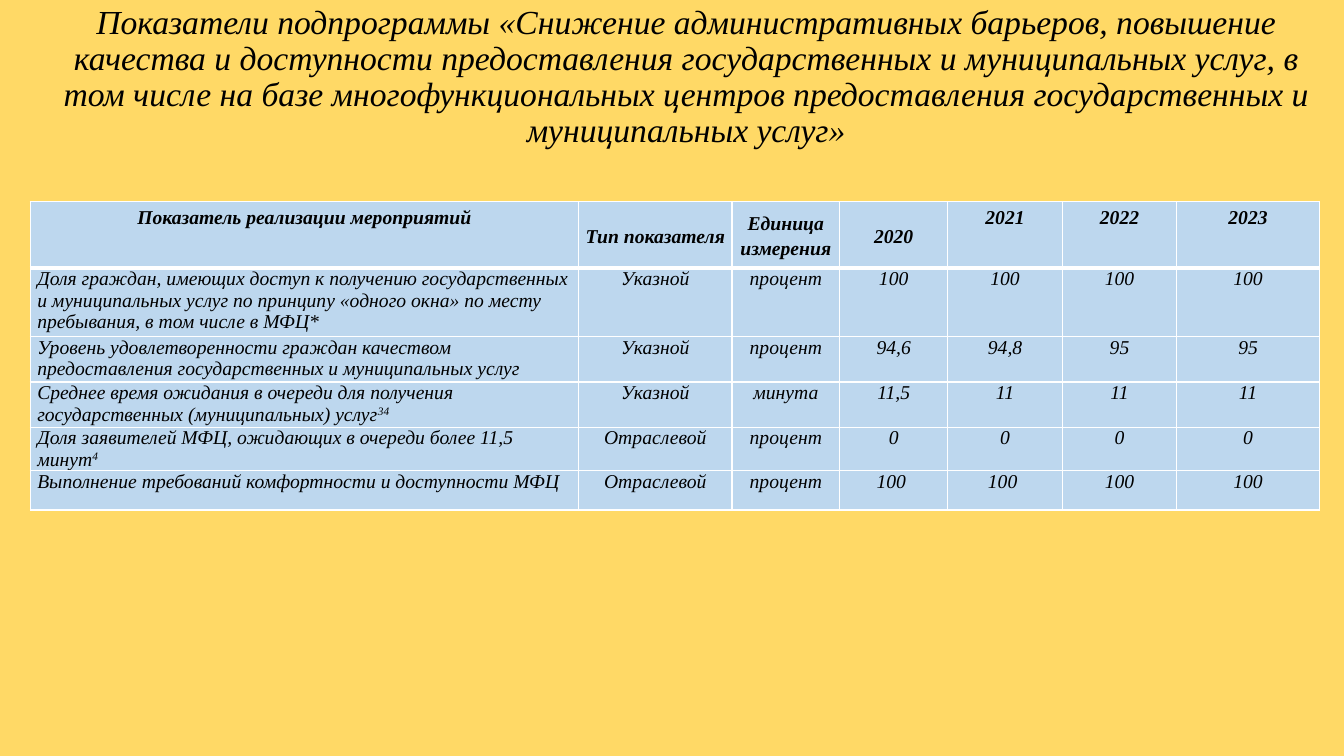
from lxml.etree import SubElement
from pptx import Presentation
from pptx.dml.color import RGBColor
from pptx.enum.text import MSO_ANCHOR, MSO_AUTO_SIZE, PP_ALIGN
from pptx.oxml.ns import qn
from pptx.util import Inches, Pt

COLORS = {"background": "FFD966", "cell": "BDD7EE", "border": "FFFFFF", "text": "000000"}
FONT = "Times New Roman"


def style_paragraph(paragraph, size, align, bold=False, spacing=None):
    paragraph.alignment = align
    paragraph.line_spacing = spacing
    paragraph.font.name = FONT
    paragraph.font.size = Pt(size)
    paragraph.font.italic = True
    paragraph.font.bold = bold
    paragraph.font.color.rgb = RGBColor.from_string(COLORS["text"])


def add_border(cell, side, width):
    line = SubElement(cell._tc.get_or_add_tcPr(), qn(f"a:ln{side}"), w=str(Pt(width)))
    fill = SubElement(line, qn("a:solidFill"))
    SubElement(fill, qn("a:srgbClr"), val=COLORS["border"])


presentation = Presentation()
presentation.slide_width = Inches(13.33)
presentation.slide_height = Inches(7.5)
slide = presentation.slides.add_slide(presentation.slide_layouts[5])
slide.background.fill.solid()
slide.background.fill.fore_color.rgb = RGBColor.from_string(COLORS["background"])

title = slide.shapes.title
title.left, title.top = Inches(0.44), Inches(0.13)
title.width, title.height = Inches(12.73), Inches(1.28)
title.text_frame.text = (
    "Показатели подпрограммы «Снижение административных барьеров, повышение качества "
    "и доступности предоставления государственных и муниципальных услуг, в том числе "
    "на базе многофункциональных центров предоставления государственных и муниципальных услуг»"
)
title.text_frame.word_wrap = True
title.text_frame.auto_size = MSO_AUTO_SIZE.NONE
title.text_frame.vertical_anchor = MSO_ANCHOR.MIDDLE
style_paragraph(title.text_frame.paragraphs[0], 24, PP_ALIGN.CENTER, spacing=0.9)

rows = [
    ["Показатель реализации мероприятий", "Тип показателя", "Единица измерения",
     "2020", "2021", "2022", "2023"],
    ["Доля граждан, имеющих доступ к получению государственных и муниципальных услуг "
     "по принципу «одного окна» по месту пребывания, в том числе в МФЦ*",
     "Указной", "процент", "100", "100", "100", "100"],
    ["Уровень удовлетворенности граждан качеством предоставления государственных "
     "и муниципальных услуг", "Указной", "процент", "94,6", "94,8", "95", "95"],
    ["Среднее время ожидания в очереди для получения государственных (муниципальных) услуг",
     "Указной", "минута", "11,5", "11", "11", "11"],
    ["Доля заявителей МФЦ, ожидающих в очереди более 11,5 минут",
     "Отраслевой", "процент", "0", "0", "0", "0"],
    ["Выполнение требований комфортности и доступности МФЦ",
     "Отраслевой", "процент", "100 ", "100 ", "100", "100"],
]
footnotes = {3: "34", 4: "4"}
column_widths = [5.44, 1.52, 1.07, 1.07, 1.14, 1.13, 1.42]
row_heights = [0.66, 0.68, 0.45, 0.45, 0.43, 0.39]

table = slide.shapes.add_table(
    len(rows), len(column_widths), Inches(0.3), Inches(2),
    Inches(sum(column_widths)), Inches(sum(row_heights)),
).table
for column, width in zip(table.columns, column_widths):
    column.width = Inches(width)
for row, height in zip(table.rows, row_heights):
    row.height = Inches(height)

for row_index, texts in enumerate(rows):
    is_header = row_index == 0
    for column_index, text in enumerate(texts):
        cell = table.cell(row_index, column_index)
        paragraph = cell.text_frame.paragraphs[0]
        paragraph.add_run().text = text
        if column_index == 0 and row_index in footnotes:
            footnote = paragraph.add_run()
            footnote.text = footnotes[row_index]
            footnote.font._element.set("baseline", "30000")

        is_middle = is_header and column_index in (1, 2, 3)
        is_label = column_index == 0 and not is_header
        style_paragraph(paragraph, 14, PP_ALIGN.LEFT if is_label else PP_ALIGN.CENTER,
                        bold=is_header, spacing=1.15 if is_middle else None)
        if is_middle:
            cell.vertical_anchor = MSO_ANCHOR.MIDDLE
            cell.margin_left = cell.margin_right = Inches(0.04)
            cell.margin_top = cell.margin_bottom = Inches(0.07)
        elif not is_header:
            cell.margin_left = cell.margin_right = Inches(0.07)
            cell.margin_top = cell.margin_bottom = 0

        add_border(cell, "L", 1)
        add_border(cell, "R", 1)
        add_border(cell, "T", 3 if row_index == 1 else 1)
        add_border(cell, "B", 3 if is_header else 1)
        cell.fill.solid()
        cell.fill.fore_color.rgb = RGBColor.from_string(COLORS["cell"])

presentation.save("out.pptx")
